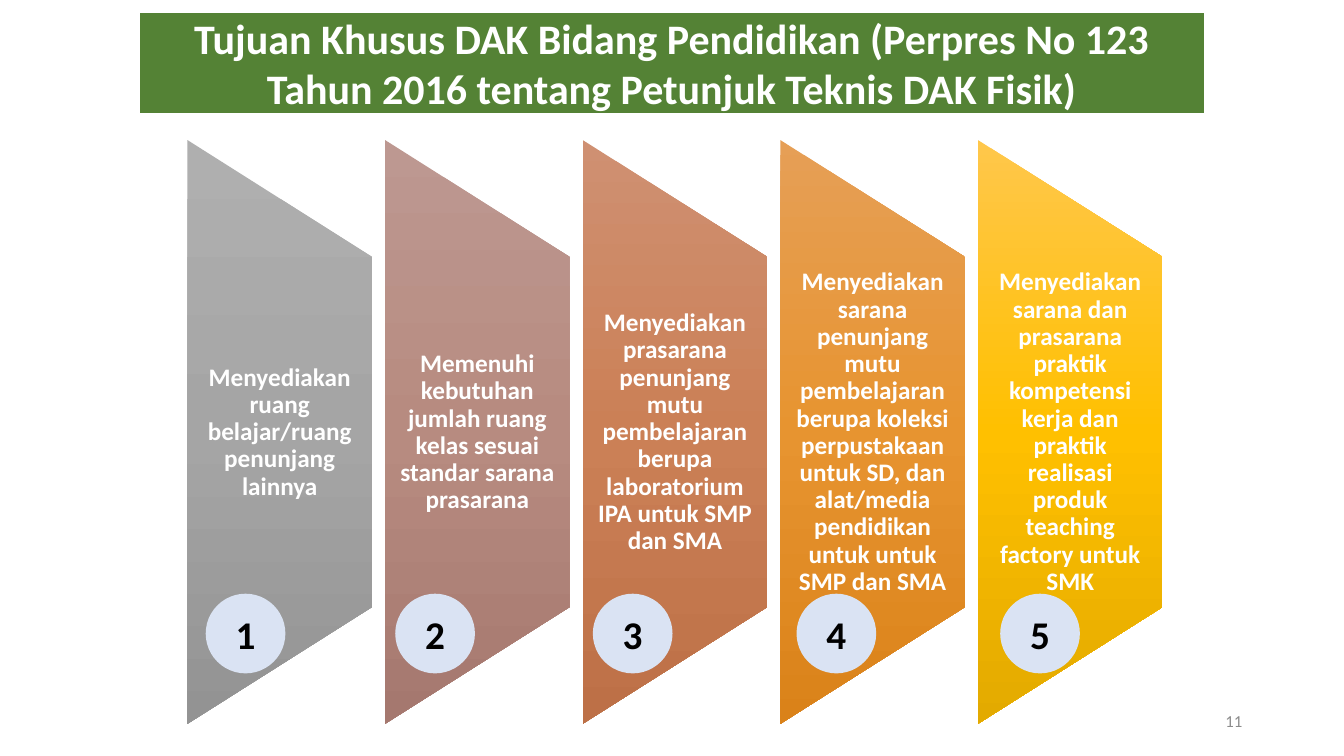
from dataclasses import dataclass

from lxml.etree import SubElement
from pptx import Presentation
from pptx.dml.color import RGBColor
from pptx.enum.shapes import MSO_SHAPE
from pptx.enum.text import MSO_ANCHOR, MSO_AUTO_SIZE, PP_ALIGN
from pptx.oxml.ns import qn
from pptx.util import Inches, Pt


@dataclass(frozen=True)
class Theme:
    font: str = "Calibri"
    banner: str = "548235"
    badge: str = "DAE3F3"
    light: str = "FFFFFF"
    dark: str = "000000"
    muted: str = "8C8C8C"
    title_size: int = 30
    badge_size: int = 28
    goal_size: int = 18
    page_size: int = 12
    panels: tuple = (
        ("AFAFAF", "A5A5A5", "939393"),
        ("BD9891", "B78B80", "A5786F"),
        ("CF9072", "CB8056", "BD7047"),
        ("E69F56", "E79430", "DA8219"),
        ("FFC74B", "FFC000", "E3AA00"),
    )


GOALS = (
    "Menyediakan ruang belajar/ruang penunjang lainnya",
    "Memenuhi kebutuhan jumlah ruang kelas sesuai standar sarana prasarana",
    "Menyediakan prasarana penunjang mutu pembelajaran berupa laboratorium "
    "IPA untuk SMP dan SMA",
    "Menyediakan sarana penunjang mutu pembelajaran berupa koleksi perpustakaan "
    "untuk SD, dan alat/media pendidikan untuk untuk SMP dan SMA",
    "Menyediakan sarana dan prasarana praktik kompetensi kerja dan praktik "
    "realisasi produk teaching factory untuk SMK",
)
BADGE_LEFTS = (2.04, 3.92, 5.88, 7.9, 9.92)
PANEL_LEFT, PANEL_TOP, PANEL_PITCH = 1.86, 1.39, 1.96
PANEL_WIDTH, PANEL_HEIGHT = 1.83, 5.79
GOAL_TOP, GOAL_HEIGHT = 2.55, 3.48
BADGE_TOP, BADGE_SIZE = 5.89, 0.79


def apply(target, values):
    for name, value in values.items():
        setattr(target, name, value)


class GoalSlide:
    def __init__(self, slide, theme):
        self.slide = slide
        self.theme = theme
        self.panels = slide.shapes.add_group_shape()

    def set_text(self, shape, text, size, color, bold=True,
                 align=PP_ALIGN.CENTER, spacing=1.0, inset=(0.1, 0.05)):
        side, end = map(Inches, inset)
        frame = shape.text_frame
        frame.text = text
        apply(frame, {
            "word_wrap": True,
            "auto_size": MSO_AUTO_SIZE.NONE,
            "vertical_anchor": MSO_ANCHOR.MIDDLE,
            "margin_left": side, "margin_right": side,
            "margin_top": end, "margin_bottom": end,
        })
        paragraph = frame.paragraphs[0]
        apply(paragraph, {"alignment": align, "line_spacing": spacing})
        font = paragraph.runs[0].font
        apply(font, {"name": self.theme.font, "size": Pt(size), "bold": bold})
        font.color.rgb = RGBColor.from_string(color)

    def paint(self, shape, color):
        shape.fill.solid()
        shape.fill.fore_color.rgb = RGBColor.from_string(color)
        shape.line.fill.background()

    def banner(self, text, left, top, width, height):
        title = self.slide.shapes.title
        apply(title, {"left": Inches(left), "top": Inches(top),
                      "width": Inches(width), "height": Inches(height)})
        self.paint(title, self.theme.banner)
        self.set_text(title, text, self.theme.title_size, self.theme.light)

    def panel(self, left, colors):
        """Add an upright panel: a trapezoid on its side, shaded downwards."""
        shape = self.panels.shapes.add_shape(
            MSO_SHAPE.FLOWCHART_MANUAL_OPERATION,
            Inches(left + (PANEL_WIDTH - PANEL_HEIGHT) / 2),
            Inches(PANEL_TOP + (PANEL_HEIGHT - PANEL_WIDTH) / 2),
            Inches(PANEL_HEIGHT), Inches(PANEL_WIDTH))
        shape.rotation = 270
        shape.shadow.inherit = False
        shape.line.fill.background()
        properties = shape._element.spPr
        gradient = SubElement(properties, qn("a:gradFill"), rotWithShape="0")
        stops = SubElement(gradient, qn("a:gsLst"))
        for position, color in zip((0, 50000, 100000), colors):
            stop = SubElement(stops, qn("a:gs"), pos=str(position))
            SubElement(stop, qn("a:srgbClr"), val=color)
        SubElement(gradient, qn("a:lin"), ang="5400000", scaled="0")
        properties.find(qn("a:prstGeom")).addnext(gradient)

    def goal(self, text, left):
        box = self.panels.shapes.add_textbox(
            Inches(left), Inches(GOAL_TOP),
            Inches(PANEL_WIDTH), Inches(GOAL_HEIGHT))
        self.set_text(box, text, self.theme.goal_size, self.theme.light,
                      spacing=0.9, inset=(0.12, 0))

    def badge(self, number, left):
        circle = self.slide.shapes.add_shape(
            MSO_SHAPE.OVAL, Inches(left), Inches(BADGE_TOP),
            Inches(BADGE_SIZE), Inches(BADGE_SIZE))
        circle.shadow.inherit = False
        self.paint(circle, self.theme.badge)
        self.set_text(circle, str(number), self.theme.badge_size,
                      self.theme.dark, inset=(0, 0.05))

    def page_number(self, number, left, top, width, height):
        box = self.slide.shapes.add_textbox(
            Inches(left), Inches(top), Inches(width), Inches(height))
        self.set_text(box, str(number), self.theme.page_size, self.theme.muted,
                      bold=False, align=PP_ALIGN.RIGHT)


def main():
    deck = Presentation()
    apply(deck, {"slide_width": Inches(13.33), "slide_height": Inches(7.5)})
    theme = Theme()
    page = GoalSlide(deck.slides.add_slide(deck.slide_layouts[5]), theme)
    page.banner("Tujuan Khusus DAK Bidang Pendidikan (Perpres No 123 Tahun 2016 "
                "tentang Petunjuk Teknis DAK Fisik)", 1.39, 0.13, 10.55, 0.99)
    rows = zip(GOALS, theme.panels, BADGE_LEFTS)
    for index, (text, colors, badge_left) in enumerate(rows):
        left = PANEL_LEFT + index * PANEL_PITCH
        page.panel(left, colors)
        page.goal(text, left)
        page.badge(index + 1, badge_left)
    page.page_number(11, 9.42, 6.95, 3, 0.4)
    deck.save("out.pptx")


if __name__ == "__main__":
    main()
